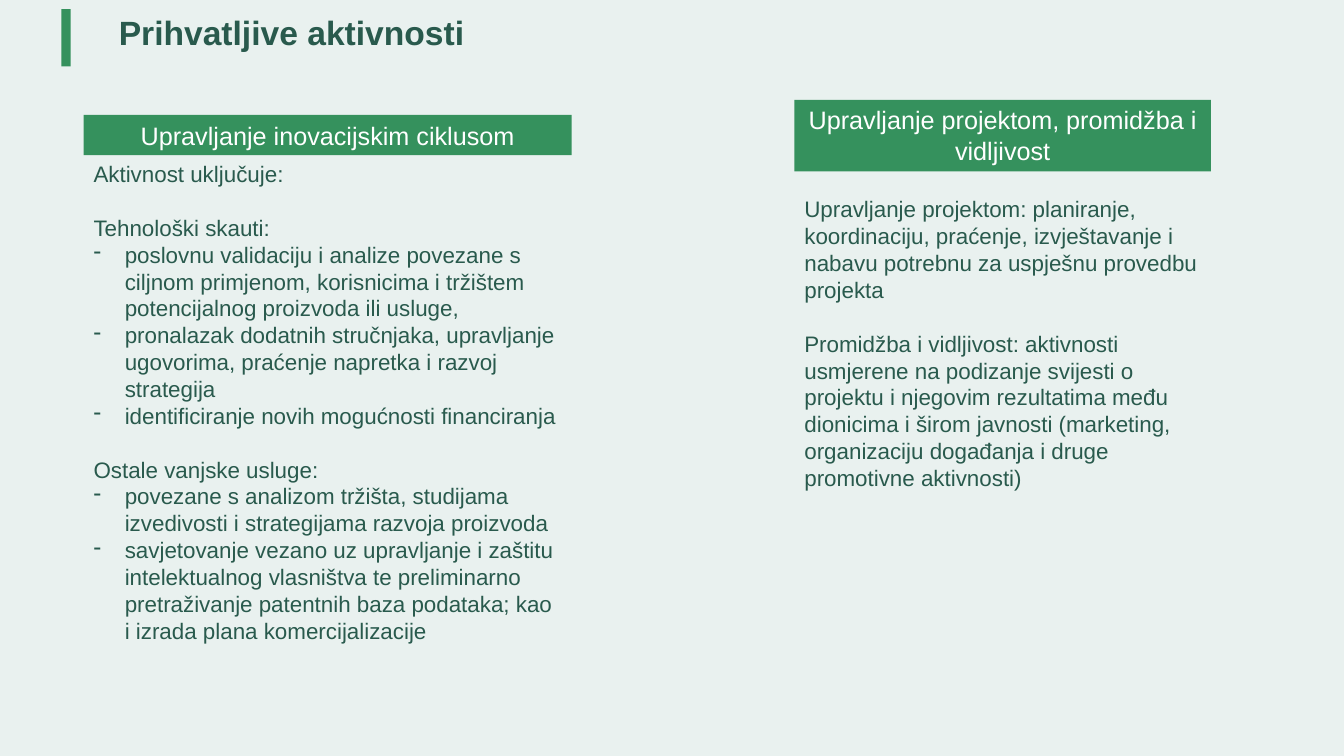
"""Build the slide on eligible activities."""
from lxml.etree import SubElement
from pptx import Presentation
from pptx.dml.color import RGBColor
from pptx.enum.shapes import MSO_SHAPE
from pptx.enum.text import MSO_ANCHOR, MSO_AUTO_SIZE, PP_ALIGN
from pptx.oxml.ns import qn
from pptx.util import Inches, Pt

TITLE = "Prihvatljive aktivnosti"
PLAIN, GAP, DASH = "plain", "gap", "dash"
COLUMNS = [
    {
        "left": 0.83, "width": 4.84,
        "header": "Upravljanje inovacijskim ciklusom",
        "header_top": 1.14, "header_height": 0.4,
        "body_top": 1.54, "body_height": 4.95,
        "body": [
            (PLAIN, "Aktivnost uključuje:"),
            (GAP, "Tehnološki skauti:"),
            (DASH, "poslovnu validaciju i analize povezane s ciljnom primjenom, "
                   "korisnicima i tržištem potencijalnog proizvoda ili usluge,"),
            (DASH, "pronalazak dodatnih stručnjaka, upravljanje ugovorima, "
                   "praćenje napretka i razvoj strategija"),
            (DASH, "identificiranje novih mogućnosti financiranja"),
            (GAP, "Ostale vanjske usluge:"),
            (DASH, "povezane s analizom tržišta, studijama izvedivosti i "
                   "strategijama razvoja proizvoda"),
            (DASH, "savjetovanje vezano uz upravljanje i zaštitu intelektualnog "
                   "vlasništva te preliminarno pretraživanje patentnih baza "
                   "podataka; kao i izrada plana komercijalizacije"),
        ],
    },
    {
        "left": 7.88, "width": 4.13,
        "header": "Upravljanje projektom, promidžba i vidljivost",
        "header_top": 0.99, "header_height": 0.71,
        "body_top": 1.89, "body_height": 3.06,
        "body": [
            (PLAIN, "Upravljanje projektom: planiranje, koordinaciju, praćenje, "
                    "izvještavanje i nabavu potrebnu za uspješnu provedbu projekta"),
            (GAP, "Promidžba i vidljivost: aktivnosti usmjerene na podizanje "
                  "svijesti o projektu i njegovim rezultatima među dionicima i "
                  "širom javnosti (marketing, organizaciju događanja i druge "
                  "promotivne aktivnosti)"),
        ],
    },
]

FONT = "Arial"
BACKGROUND = RGBColor(0xE9, 0xF1, 0xEF)
GREEN = RGBColor(0x35, 0x91, 0x5D)
DARK = RGBColor(0x29, 0x5A, 0x4D)
WHITE = RGBColor(0xFF, 0xFF, 0xFF)
BODY_SIZE = 16
LINE_GAP = Pt(BODY_SIZE * 1.2)
INDENT = Inches(0.31)


def add_bar(slide, left, top, width, height):
    sp = slide.shapes.add_shape(MSO_SHAPE.RECTANGLE, Inches(left), Inches(top),
                                Inches(width), Inches(height))
    sp.shadow.inherit = False
    sp.fill.solid()
    sp.fill.fore_color.rgb = GREEN
    sp.line.fill.background()
    return sp


def add_text_frame(slide, left, top, width, height):
    tf = slide.shapes.add_textbox(Inches(left), Inches(top), Inches(width),
                                  Inches(height)).text_frame
    tf.word_wrap = True
    return tf


def write(p, text, size, color, bold=False):
    p.text = text
    for r in p.runs:
        r.font.name = FONT
        r.font.size = Pt(size)
        r.font.color.rgb = color
        r.font.bold = bold


def add_dash(p):
    pPr = p._p.get_or_add_pPr()
    pPr.set("marL", str(INDENT))
    pPr.set("indent", str(-INDENT))
    SubElement(pPr, qn("a:buChar")).set("char", "-")


def add_column(slide, col):
    left, width = col["left"], col["width"]
    tf = add_bar(slide, left, col["header_top"], width,
                 col["header_height"]).text_frame
    tf.word_wrap = True
    tf.auto_size = MSO_AUTO_SIZE.SHAPE_TO_FIT_TEXT
    tf.vertical_anchor = MSO_ANCHOR.TOP
    tf.paragraphs[0].alignment = PP_ALIGN.CENTER
    write(tf.paragraphs[0], col["header"], 18, WHITE)

    tf = add_text_frame(slide, left, col["body_top"], width, col["body_height"])
    tf.auto_size = MSO_AUTO_SIZE.SHAPE_TO_FIT_TEXT
    for i, (kind, text) in enumerate(col["body"]):
        p = tf.add_paragraph() if i else tf.paragraphs[0]
        if kind == GAP:
            p.space_before = LINE_GAP
        elif kind == DASH:
            add_dash(p)
        write(p, text, BODY_SIZE, DARK)


def main():
    prs = Presentation()
    prs.slide_width, prs.slide_height = Inches(13.33), Inches(7.5)
    slide = prs.slides.add_slide(prs.slide_layouts[6])
    slide.background.fill.solid()
    slide.background.fill.fore_color.rgb = BACKGROUND

    tf = add_text_frame(slide, 1.08, 0.11, 10.71, 0.47)
    tf.vertical_anchor = MSO_ANCHOR.MIDDLE
    tf.paragraphs[0].line_spacing = 0.9
    write(tf.paragraphs[0], TITLE, 24, DARK, bold=True)
    add_bar(slide, 0.61, 0.09, 0.09, 0.57)

    for col in COLUMNS:
        add_column(slide, col)
    prs.save("out.pptx")


if __name__ == "__main__":
    main()
